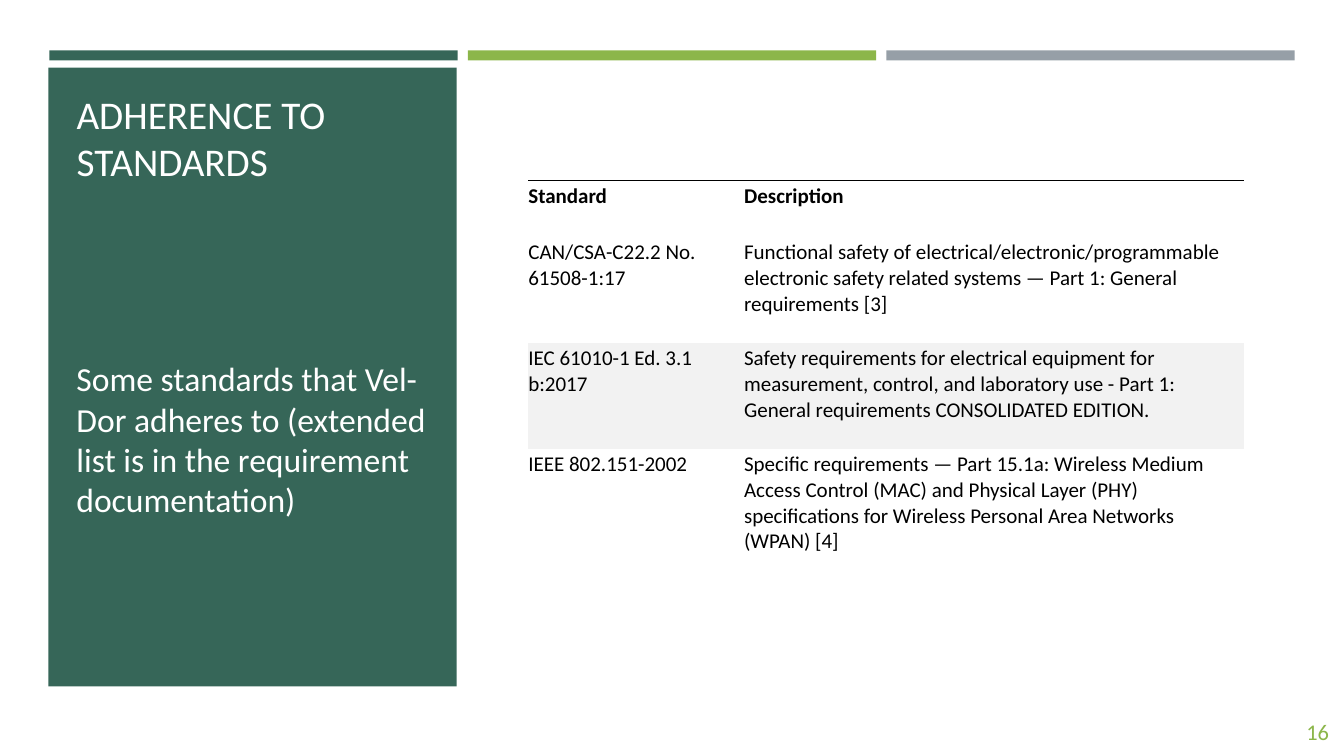
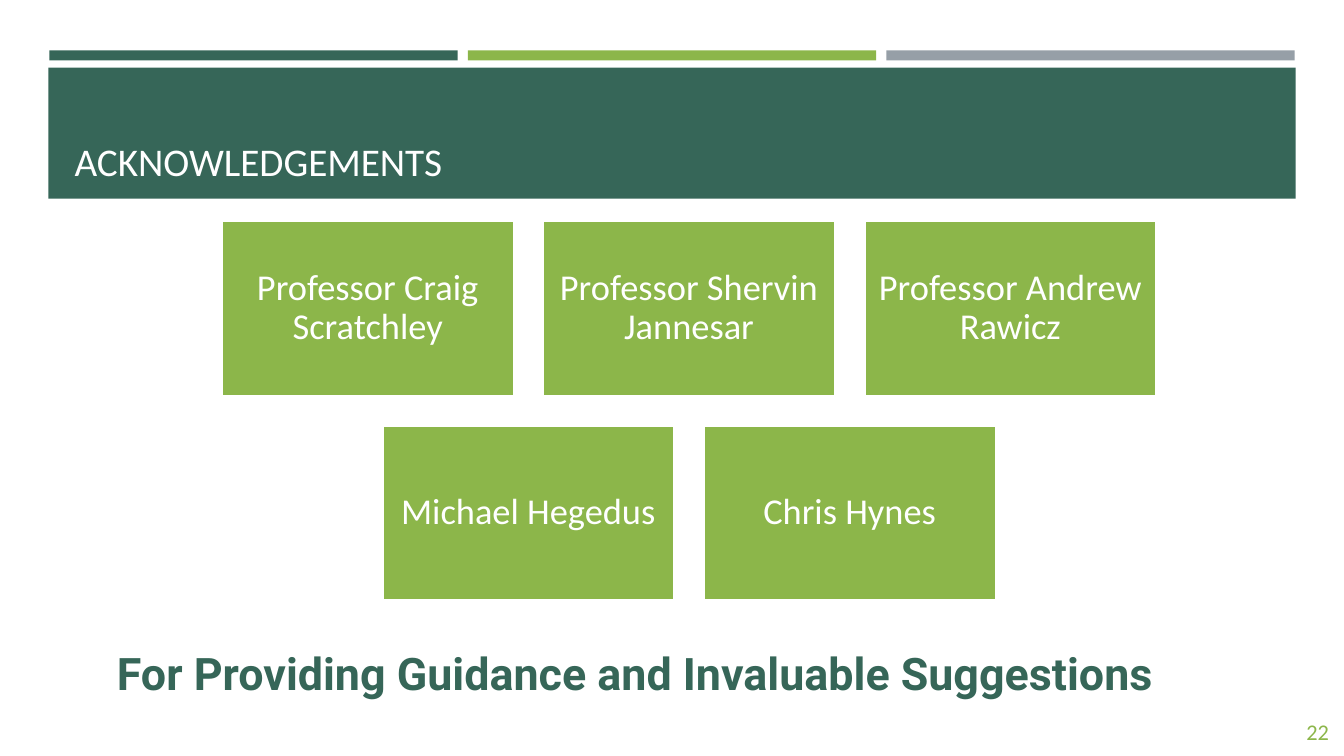
from lxml import etree
from pptx import Presentation
from pptx.dml.color import RGBColor
from pptx.enum.shapes import MSO_SHAPE as SHAPE
from pptx.enum.text import MSO_ANCHOR as ANCHOR, MSO_AUTO_SIZE as AUTO, PP_ALIGN as ALIGN
from pptx.oxml.ns import qn
from pptx.util import Inches, Pt

GREEN = RGBColor(0x36, 0x66, 0x58)
LIME = RGBColor(0x8C, 0xB6, 0x4A)
GREY = RGBColor(0x96, 0x9F, 0xA7)
PALE = RGBColor(0xF2, 0xF2, 0xF2)
WHITE = RGBColor(0xFF, 0xFF, 0xFF)
BLACK = RGBColor(0, 0, 0)
FONT = "Calibri"
PLAIN_TABLE = "{2D5ABB26-0587-4C30-8999-92F81FD0307C}"

STANDARDS = [
    ("Standard", "Description"),
    ("CAN/CSA-C22.2 No. 61508-1:17",
     "Functional safety of electrical/electronic/programmable electronic safety "
     "related systems — Part 1: General requirements [3]"),
    ("IEC 61010-1 Ed. 3.1 b:2017",
     "Safety requirements for electrical equipment for measurement, control, and "
     "laboratory use - Part 1: General requirements CONSOLIDATED EDITION."),
    ("IEEE 802.151-2002",
     "Specific requirements — Part 15.1a: Wireless Medium Access Control (MAC) and "
     "Physical Layer (PHY) specifications for Wireless Personal Area Networks (WPAN) [4]"),
]
PEOPLE = [
    ["Professor Craig Scratchley", "Professor Shervin Jannesar", "Professor Andrew Rawicz"],
    ["Michael Hegedus", "Chris Hynes"],
]


def place(box):
    return [Inches(v) for v in box]


def style(p, size, color, font=FONT, bold=False, align=ALIGN.LEFT):
    p.alignment = align
    p.font.name, p.font.size, p.font.bold = font, Pt(size), bold
    p.font.color.rgb = color


def add_rect(slide, box, fill):
    sp = slide.shapes.add_shape(SHAPE.RECTANGLE, *place(box))
    sp.shadow.inherit = False
    sp.fill.solid()
    sp.fill.fore_color.rgb = fill
    sp.line.fill.background()
    return sp


def add_text(slide, box, text, size, color, anchor=ANCHOR.MIDDLE, **font):
    tf = slide.shapes.add_textbox(*place(box)).text_frame
    tf.word_wrap = True
    tf.vertical_anchor = anchor
    p = tf.paragraphs[0]
    p.text = text
    style(p, size, color, **font)
    return p


def add_base(prs, title, title_box, panel_box, number):
    """Slide with the three stripes, green panel, title and page number."""
    slide = prs.slides.add_slide(prs.slide_layouts[5])
    for i, color in enumerate((GREEN, LIME, GREY)):
        add_rect(slide, (0.49 + 4.15 * i, 0.5, 4.05, 0.1), color)
    add_rect(slide, panel_box, GREEN)

    sp = slide.shapes.title
    sp.left, sp.top, sp.width, sp.height = place(title_box)
    sp.element.getparent().append(sp.element)  # in front of the panel
    tf = sp.text_frame
    tf.text = title
    tf.word_wrap = True
    tf.auto_size = AUTO.NONE
    tf.vertical_anchor = ANCHOR.BOTTOM
    style(tf.paragraphs[0], 28, WHITE)

    add_text(slide, (12.13, 7.06, 1.15, 0.4), str(number), 16, LIME, align=ALIGN.RIGHT)
    return slide


def add_top_border(cell):
    ln = etree.Element(qn("a:lnT"), w=str(Pt(0.5)))
    fill = etree.SubElement(ln, qn("a:solidFill"))
    etree.SubElement(fill, qn("a:srgbClr"), val=str(BLACK))
    cell._tc.get_or_add_tcPr().insert(0, ln)


def add_standards_table(slide, box, widths, heights):
    frame = slide.shapes.add_table(len(heights), len(widths), *place(box))
    next(frame.element.iter(qn("a:tableStyleId"))).text = PLAIN_TABLE
    table = frame.table
    table.horz_banding = False
    for col, width in zip(table.columns, widths):
        col.width = Inches(width)
    for r, (row, height) in enumerate(zip(table.rows, heights)):
        row.height = Inches(height)
        for cell, text in zip(row.cells, STANDARDS[r]):
            cell.text = text
            cell.margin_left, cell.margin_top = 0, Inches(0.03)
            cell.margin_right, cell.margin_bottom = Inches(0.07), Inches(0.22)
            style(cell.text_frame.paragraphs[0], 15, BLACK, bold=r == 0)
            if r == 2:
                cell.fill.solid()
                cell.fill.fore_color.rgb = PALE
            else:
                cell.fill.background()
            if r == 0:
                add_top_border(cell)


def add_card(slide, box, name):
    sp = add_rect(slide, box, LIME)
    sp.line.color.rgb = WHITE
    sp.line.width = Pt(1.75)
    tf = sp.text_frame
    tf.word_wrap = True
    tf.vertical_anchor = ANCHOR.MIDDLE
    tf.margin_left = tf.margin_right = tf.margin_top = tf.margin_bottom = Inches(0.11)
    p = tf.paragraphs[0]
    p.text = name
    p.line_spacing = 0.9
    style(p, 26, WHITE, align=ALIGN.CENTER)


def add_card_grid(slide, box, gap=0.29):
    """Rows of equal cards, each row centred in the box."""
    left, top, width, height = box
    card_w = (width - 2 * gap) / 3
    card_h = (height - gap) / 2
    for r, names in enumerate(PEOPLE):
        row_w = len(names) * (card_w + gap) - gap
        x = left + (width - row_w) / 2
        y = top + r * (card_h + gap)
        for c, name in enumerate(names):
            add_card(slide, (x + c * (card_w + gap), y, card_w, card_h), name)


def build_standards(prs):
    slide = add_base(prs, "ADHERENCE TO STANDARDS", (0.66, 0.77, 3.73, 1.11),
                     (0.48, 0.67, 4.05, 6.14), 16)
    p = add_text(slide, (0.66, 2.15, 3.73, 4.41),
                 "Some standards that Vel-Dor adheres to (extended list is in the "
                 "requirement documentation)", 24, WHITE)
    p.space_after = Pt(6)
    add_standards_table(slide, (5.24, 1.79, 7.1, 3.95), (2.14, 4.96),
                        (0.56, 1.05, 1.05, 1.29))


def build_acknowledgements(prs):
    slide = add_base(prs, "ACKNOWLEDGEMENTS", (0.64, 0.77, 12.06, 1.11),
                     (0.48, 0.67, 12.37, 1.3), 22)
    add_card_grid(slide, (2.2, 2.19, 9.27, 3.77))
    add_text(slide, (1.06, 6.36, 11.55, 0.64),
             "For Providing Guidance and Invaluable Suggestions", 32, GREEN,
             anchor=ANCHOR.TOP, font="Roboto", bold=True)


def main():
    prs = Presentation()
    prs.slide_width, prs.slide_height = Inches(13.33), Inches(7.5)
    build_standards(prs)
    build_acknowledgements(prs)
    prs.save("out.pptx")


if __name__ == "__main__":
    main()
